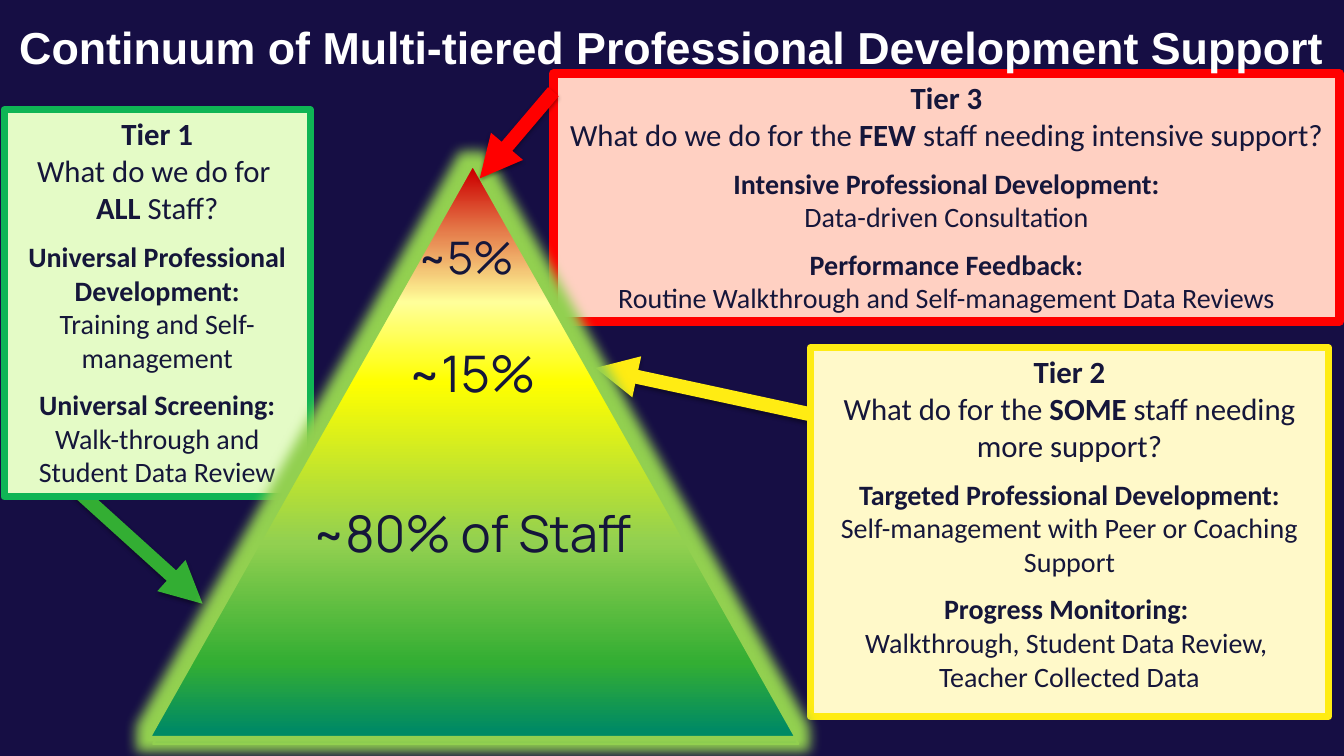
from lxml import etree
from pptx import Presentation
from pptx import util as u
from pptx.dml import color
from pptx.enum import shapes, text
from pptx.oxml import ns

COLORS = {
    "background": "160E44", "ink": "15163A", "white": "FFFFFF",
    "red": "FF0000", "pink": "FFD0C2",
    "yellow": "FFEC13", "cream": "FFF9C9",
    "green": "0FB555", "mint": "E4FBC6", "arrow_green": "33AE33",
    "glow": "92D050", "shadow": "000000",
}
# Gradient stops of the pyramid, from the tip to the base
TIP = [(1, "CC0000"), (12, "E6804D")]
MIDDLE = [(24, "FFFF99"), (38, "FFFF00")]
BASE = [(87, "33AE33"), (99, "008A64")]


def rgb(name):
    return color.RGBColor.from_string(COLORS[name])


def add_xml(parent, tag, **attributes):
    return etree.SubElement(parent, ns.qn(tag), attributes)


def emu(points):
    return str(int(u.Pt(points)))


class TierSlide:
    """Style and drawing methods for the current slide."""

    body_font = "Calibri"
    title_font = "Arial"
    label_font = "Manrope"

    def __init__(self, presentation):
        self.slide = presentation.slides.add_slide(presentation.slide_layouts[5])
        fill = self.slide.background.fill
        fill.solid()
        fill.fore_color.rgb = rgb("background")

    def style(self, font, name, size, color_name="ink", bold=None):
        font.name, font.size, font.bold = name, u.Pt(size), bold
        font.color.rgb = rgb(color_name)

    def title(self, words, left, top, width, height):
        shape = self.slide.shapes.title
        shape.left, shape.top, shape.width, shape.height = map(u.Pt, (left, top, width, height))
        frame = shape.text_frame
        frame.text = words
        frame.auto_size = text.MSO_AUTO_SIZE.NONE
        frame.vertical_anchor = text.MSO_ANCHOR.MIDDLE
        frame.margin_left = frame.margin_right = u.Pt(7.2)
        frame.margin_top = frame.margin_bottom = u.Pt(7.2)
        paragraph = frame.paragraphs[0]
        paragraph.alignment = text.PP_ALIGN.LEFT
        paragraph.line_spacing = 0.9
        self.style(paragraph.font, self.title_font, 32, "white", True)
        # Bring the title to the front
        shape.element.getparent().append(shape.element)

    def box(self, left, top, width, height, fill, line, line_width, question, sections):
        """A tier box: heading and question, then titled sections."""
        shape = self.slide.shapes.add_shape(
            shapes.MSO_SHAPE.RECTANGLE, *map(u.Pt, (left, top, width, height)))
        shape.shadow.inherit = False
        shape.fill.solid()
        shape.fill.fore_color.rgb = rgb(fill)
        shape.line.color.rgb = rgb(line)
        shape.line.width = u.Pt(line_width)
        frame = shape.text_frame
        frame.word_wrap = True
        frame.vertical_anchor = text.MSO_ANCHOR.TOP
        blocks = [(22, question)] + [(20, section) for section in sections]
        paragraph = frame.paragraphs[0]
        for number, (size, lines) in enumerate(blocks):
            for index, line_runs in enumerate(lines):
                if number or index:
                    paragraph = frame.add_paragraph()
                if number and not index:
                    paragraph.space_before = u.Pt(9.8)
                paragraph.alignment = text.PP_ALIGN.CENTER
                self.style(paragraph.font, self.body_font, size, bold=index == 0)
                # Odd pieces between asterisks are bold
                for piece, words in enumerate(line_runs.split("*")):
                    if words:
                        run = paragraph.add_run()
                        run.text = words
                        if piece % 2:
                            run.font.bold = True

    def pyramid(self, left, top, stops, glow=None):
        shape = self.slide.shapes.add_shape(
            shapes.MSO_SHAPE.TRAPEZOID, *map(u.Pt, (left, top, 460.8, 408.24)))
        shape.adjustments[0] = 0.565
        shape.shadow.inherit = False
        shape.fill.gradient()
        shape.fill.gradient_angle = 270
        properties = shape.element.spPr
        stop_list = properties.find(".//" + ns.qn("a:gsLst"))
        stop_list.clear()
        for position, value in stops:
            stop = add_xml(stop_list, "a:gs", pos=str(position * 1000))
            add_xml(stop, "a:srgbClr", val=value)
        shape.line.color.rgb = rgb("glow")
        shape.line.width = u.Pt(1.5)
        if glow:
            effects = properties.find(ns.qn("a:effectLst"))
            halo = add_xml(effects, "a:glow", rad=emu(glow))
            add_xml(halo, "a:srgbClr", val=COLORS["glow"])

    def arrow(self, start, end, color_name):
        connector = self.slide.shapes.add_connector(
            shapes.MSO_CONNECTOR.STRAIGHT, *map(u.Pt, start + end))
        connector.line.color.rgb = rgb(color_name)
        connector.line.width = u.Pt(10)
        add_xml(connector.line._get_or_add_ln(), "a:tailEnd", type="triangle")
        effects = add_xml(connector.element.spPr, "a:effectLst")
        shadow = add_xml(effects, "a:outerShdw", blurRad=emu(3.1), dist=emu(1.6),
                         dir="5400000", rotWithShape="0")
        shade = add_xml(shadow, "a:srgbClr", val=COLORS["shadow"])
        add_xml(shade, "a:alpha", val="38000")

    def label(self, words, left, top, width, height, size):
        shape = self.slide.shapes.add_textbox(*map(u.Pt, (left, top, width, height)))
        frame = shape.text_frame
        frame.word_wrap = True
        frame.text = words
        paragraph = frame.paragraphs[0]
        paragraph.alignment = text.PP_ALIGN.CENTER
        self.style(paragraph.font, self.label_font, size)


def main():
    presentation = Presentation()
    presentation.slide_width, presentation.slide_height = u.Pt(960), u.Pt(540)
    tiers = TierSlide(presentation)

    # Tier 3 box
    tiers.box(395.28, 52.56, 561.6, 177.12, "pink", "red", 6,
              ["Tier 3", "What do we do for the *FEW* staff needing intensive support?"],
              [["Intensive Professional Development:", "Data-driven Consultation"],
               ["Performance Feedback:",
                "Routine Walkthrough and Self-management Data Reviews"]])

    # Tier 1: base of the pyramid, arrow and box
    tiers.pyramid(109.44, 123.12, [(18, "92D050"), (64, "33AE33"), (99, "008A64")])
    tiers.arrow((31.68, 329.04), (144.72, 431.28), "arrow_green")
    tiers.box(2.88, 78.48, 218.88, 276.48, "mint", "green", 5,
              ["Tier 1", "What do we do for ", "*ALL* Staff?"],
              [["Universal Professional Development:", "Training and Self-management"],
               ["Universal Screening:", "Walk-through and Student Data Review"]])

    # Tier 2: middle of the pyramid, arrow and box
    lower = MIDDLE + [(66, "92D050")] + BASE
    tiers.pyramid(106.56, 120.24, lower)
    tiers.arrow((668.88, 315.36), (425.52, 262.8), "yellow")
    tiers.box(578.88, 248.4, 370.08, 263.52, "cream", "yellow", 5,
              ["Tier 2", "What do for the* SOME *staff needing more support?"],
              [["Targeted Professional Development:",
                "Self-management with Peer or Coaching Support"],
               ["Progress Monitoring: ", "Walkthrough, Student Data Review, ",
                "Teacher Collected Data"]])

    # Tier 3: full pyramid with its glow, and arrow
    tiers.pyramid(107.28, 118.08, TIP + lower, glow=18)
    tiers.arrow((395.28, 65.52), (342.72, 127.44), "red")

    # Title and shares of staff
    tiers.title("Continuum of Multi-tiered Professional Development Support",
                6.48, 5.76, 954, 60.48)
    tiers.label("~80% of Staff", 207.36, 354.96, 259.2, 51.12, 36)
    tiers.label("~15%", 256.32, 240.48, 161.28, 51.12, 36)
    tiers.label("~5%", 280.8, 160.56, 103.68, 46.08, 32)

    presentation.save("out.pptx")


if __name__ == "__main__":
    main()
